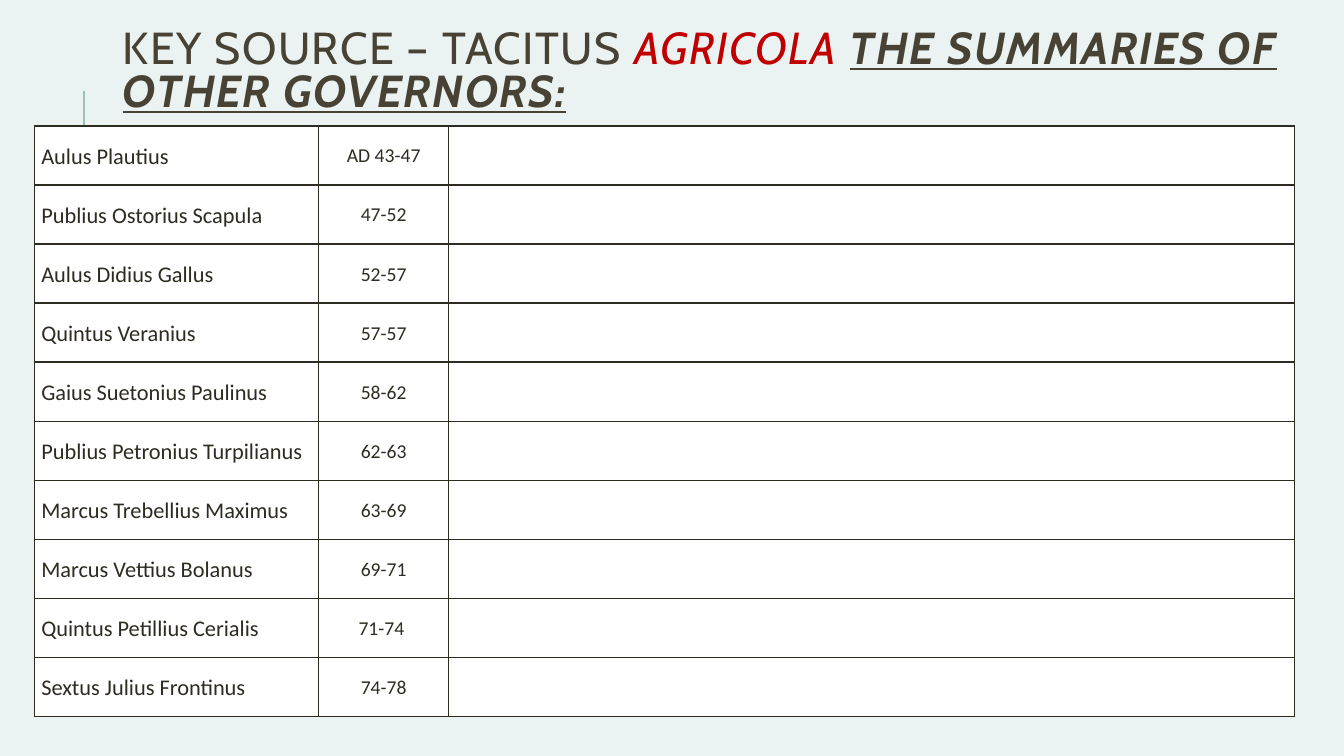
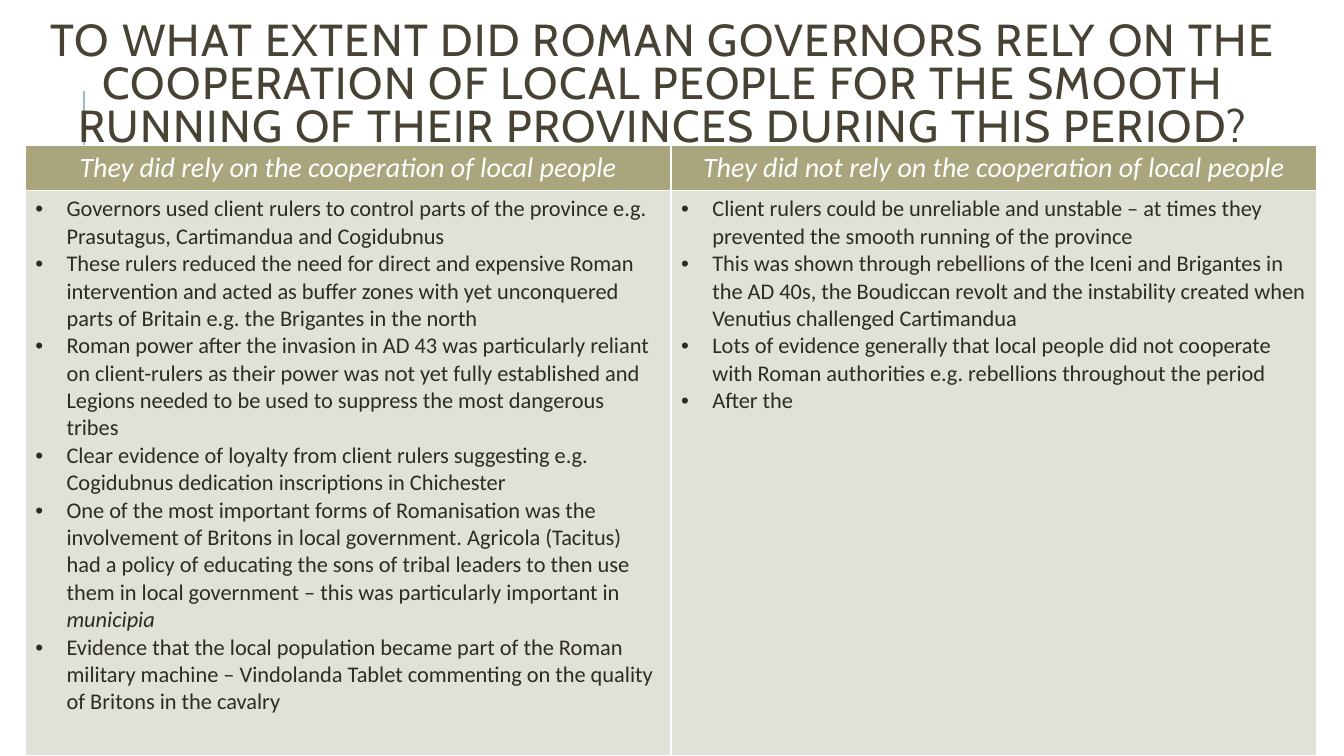
from dataclasses import dataclass, field
from typing import NamedTuple

from lxml.etree import SubElement
from pptx import Presentation
from pptx.dml.color import RGBColor
from pptx.enum.shapes import MSO_CONNECTOR
from pptx.enum.text import MSO_ANCHOR, MSO_AUTO_SIZE, PP_ALIGN
from pptx.oxml import parse_xml
from pptx.oxml.ns import nsdecls, qn
from pptx.util import Emu, Inches, Pt


# Theme: colours, fonts and type sizes
@dataclass(frozen=True)
class Theme:
    mist: str = "EBF2F2"
    white: str = "FFFFFF"
    accent: str = "9CBEBD"
    title: str = "474233"
    red: str = "C00000"
    ink: str = "2E2B21"
    olive: str = "A9A57C"
    stone: str = "E2E1D7"
    title_font: str = "Cabin"
    body_font: str = "Calibri"
    title_size: int = 32
    head_size: int = 20
    text_size: int = 16
    date_size: int = 14
    rule: float = 1.5
    border: int = 1
    indent: float = 0.31


T = Theme()
WIDTH, HEIGHT = Inches(13.33), Inches(7.5)
TITLE = {"name": T.title_font, "size": T.title_size, "color": T.title}
BODY = {"name": T.body_font, "size": T.text_size, "color": T.ink}
HEAD = BODY | {"size": T.head_size, "color": T.white, "italic": True}
DATE = BODY | {"size": T.date_size}


class Run(NamedTuple):
    text: str
    style: dict = {}


class Box(NamedTuple):
    """Left, top, width and height as percent of the slide."""
    left: float
    top: float
    width: float
    height: float

    def emu(self) -> dict:
        return {"left": across(self.left), "top": down(self.top),
                "width": across(self.width), "height": down(self.height)}


@dataclass
class CellStyle:
    font: dict
    fill: str
    border: str
    para: dict = field(default_factory=dict)
    frame: dict = field(default_factory=dict)
    bullet: bool = False


def across(percent: float) -> Emu:
    return Emu(round(WIDTH * percent / 100))


def down(percent: float) -> Emu:
    return Emu(round(HEIGHT * percent / 100))


def set_all(obj, values: dict) -> None:
    for name, value in values.items():
        setattr(obj, name, value)


def add_run(p, run: Run, base: dict, spacing: int = 0) -> None:
    r = p.add_run()
    r.text = run.text
    style = base | run.style
    r.font.color.rgb = RGBColor.from_string(style.pop("color"))
    r.font.size = Pt(style.pop("size"))
    set_all(r.font, style)
    if spacing:
        r._r.get_or_add_rPr().set("spc", str(spacing * 100))


def add_slide(prs, background: str, box: Box, align, runs: list[Run]):
    """Add a title-only slide with its background and title."""
    s = prs.slides.add_slide(prs.slide_layouts[5])
    s.background.fill.solid()
    s.background.fill.fore_color.rgb = RGBColor.from_string(background)
    sp = s.shapes.title
    set_all(sp, box.emu())
    tf = sp.text_frame
    set_all(tf, {"word_wrap": True, "auto_size": MSO_AUTO_SIZE.NONE,
                 "vertical_anchor": MSO_ANCHOR.MIDDLE})
    p = tf.paragraphs[0]
    set_all(p, {"alignment": align, "line_spacing": 0.8})
    for run in runs:
        add_run(p, run, TITLE, spacing=1)
    return s


def add_layout_rule(s) -> None:
    """Place the short upright rule on the shared layout, behind the titles."""
    x = across(6.25)
    ln = s.shapes.add_connector(MSO_CONNECTOR.STRAIGHT, x, down(25.33), x, down(12))
    ln.line.color.rgb = RGBColor.from_string(T.accent)
    ln.line.width = Pt(T.rule)
    SubElement(ln._element.spPr, qn("a:effectLst"))
    s.slide_layout.shapes._spTree.insert(2, ln._element)


def set_borders(cell, color: str) -> None:
    tcPr = cell._tc.get_or_add_tcPr()
    for i, side in enumerate(("lnL", "lnR", "lnT", "lnB")):
        tcPr.insert(i, parse_xml(
            f'<a:{side} {nsdecls("a")} w="{Pt(T.border)}"><a:solidFill>'
            f'<a:srgbClr val="{color}"/></a:solidFill></a:{side}>'))


def set_bullet(p) -> None:
    pPr = p._p.get_or_add_pPr()
    pPr.set("marL", str(Inches(T.indent)))
    pPr.set("indent", str(-Inches(T.indent)))
    SubElement(pPr, qn("a:buFont")).set("typeface", "Arial")
    SubElement(pPr, qn("a:buChar")).set("char", "•")


def fill_cell(cell, paras: list[list[Run]], style: CellStyle) -> None:
    cell.fill.solid()
    cell.fill.fore_color.rgb = RGBColor.from_string(style.fill)
    set_borders(cell, style.border)
    set_all(cell, style.frame)
    tf = cell.text_frame
    for i, runs in enumerate(paras):
        p = tf.paragraphs[0] if i == 0 else tf.add_paragraph()
        set_all(p, style.para)
        if style.bullet:
            set_bullet(p)
        for run in runs:
            add_run(p, run, style.font)


def add_grid(s, left: float, top: float, cols: list[float], rows: list[float]):
    """Add a plain table from column and row sizes in percent of the slide."""
    box = Box(left, top, sum(cols), sum(rows))
    table = s.shapes.add_table(len(rows), len(cols), **box.emu()).table
    set_all(table, {"first_row": False, "horz_banding": False})
    for col, width in zip(table.columns, cols):
        col.width = across(width)
    for row, height in zip(table.rows, rows):
        row.height = down(height)
    return table


GOVERNORS = [
    ("Aulus Plautius", "AD 43-47"),
    ("Publius Ostorius Scapula", "47-52"),
    ("Aulus Didius Gallus", "52-57"),
    ("Quintus Veranius", "57-57"),
    ("Gaius Suetonius Paulinus", "58-62"),
    ("Publius Petronius Turpilianus", "62-63"),
    ("Marcus Trebellius Maximus", "63-69"),
    ("Marcus Vettius Bolanus", "69-71"),
    ("Quintus Petillius Cerialis", "71-74 "),
    ("Sextus Julius Frontinus", "74-78"),
]

ARGUMENTS = {
    "They did rely on the cooperation of local people": [
        [Run("Governors used client rulers to control parts of the province e.g. "
             "Prasutagus, Cartimandua and Cogidubnus")],
        [Run("These rulers reduced the need for direct and expensive Roman "
             "intervention and acted as buffer zones with yet unconquered parts "
             "of Britain e.g. the Brigantes in the north")],
        [Run("Roman power after the invasion in AD 43 was particularly reliant on "
             "client-rulers as their power was not yet fully established and "
             "Legions needed to be used to suppress the most dangerous tribes")],
        [Run("Clear evidence of loyalty from client rulers suggesting e.g. "
             "Cogidubnus dedication inscriptions in Chichester")],
        [Run("One of the most important forms of Romanisation was the involvement "
             "of Britons in local government. Agricola (Tacitus) had a policy of "
             "educating the sons of tribal leaders to then use them in local "
             "government – this was particularly important in "),
         Run("municipia", {"italic": True})],
        [Run("Evidence that the local population became part of the Roman military "
             "machine – Vindolanda Tablet commenting on the quality of Britons in "
             "the cavalry")],
    ],
    "They did not rely on the cooperation of local people": [
        [Run("Client rulers could be unreliable and unstable – at times they "
             "prevented the smooth running of the province")],
        [Run("This was shown through rebellions of the Iceni and Brigantes in the "
             "AD 40s, the Boudiccan revolt and the instability created when "
             "Venutius challenged Cartimandua")],
        [Run("Lots of evidence generally that local people did not cooperate with "
             "Roman authorities e.g. rebellions throughout the period")],
        [Run("After the")],
    ],
}


def governors_slide(prs) -> None:
    s = add_slide(prs, T.mist, Box(8.4, 2.67, 89.8, 14), PP_ALIGN.LEFT, [
        Run("KEY SOURCE – TACITUS "),
        Run("AGRICOLA ", {"color": T.red, "italic": True}),
        Run("THE SUMMARIES OF OTHER GOVERNORS:",
            {"bold": True, "italic": True, "underline": True}),
    ])
    add_layout_rule(s)
    # Names, dates and an empty column for notes
    frame = {"vertical_anchor": MSO_ANCHOR.MIDDLE, "margin_top": 0, "margin_bottom": 0,
             "margin_left": Inches(0.07), "margin_right": Inches(0.07)}
    name = CellStyle(BODY, T.white, T.ink, {"line_spacing": 1.06}, frame)
    date = CellStyle(DATE, T.white, T.ink,
                     {"line_spacing": 1.06, "alignment": PP_ALIGN.CENTER}, frame)
    blank = CellStyle(BODY, T.white, T.ink)
    table = add_grid(s, 2.55, 16.67, [21.16, 9.68, 62.94], [7.81] * len(GOVERNORS))
    for i, (governor, years) in enumerate(GOVERNORS):
        fill_cell(table.cell(i, 0), [[Run(governor)]], name)
        fill_cell(table.cell(i, 1), [[Run(years)]], date)
        fill_cell(table.cell(i, 2), [], blank)


def cooperation_slide(prs) -> None:
    s = add_slide(prs, T.white, Box(1.88, 3.6, 94.97, 15.6), PP_ALIGN.CENTER, [
        Run("TO WHAT EXTENT DID ROMAN GOVERNORS RELY ON THE COOPERATION OF LOCAL "
            "PEOPLE FOR THE SMOOTH RUNNING OF THEIR PROVINCES DURING THIS PERIOD?"),
    ])
    # Arguments for and against, down to the foot of the slide
    head = CellStyle(HEAD, T.olive, T.white, {"alignment": PP_ALIGN.CENTER},
                     {"vertical_anchor": MSO_ANCHOR.MIDDLE})
    points = CellStyle(BODY, T.stone, T.white, bullet=True)
    table = add_grid(s, 1.88, 19.2, [48.05] * len(ARGUMENTS), [6, 74.8])
    for i, (claim, reasons) in enumerate(ARGUMENTS.items()):
        fill_cell(table.cell(0, i), [[Run(claim)]], head)
        fill_cell(table.cell(1, i), reasons, points)


def main() -> None:
    prs = Presentation()
    set_all(prs, {"slide_width": WIDTH, "slide_height": HEIGHT})
    governors_slide(prs)
    cooperation_slide(prs)
    prs.save("out.pptx")


if __name__ == "__main__":
    main()
